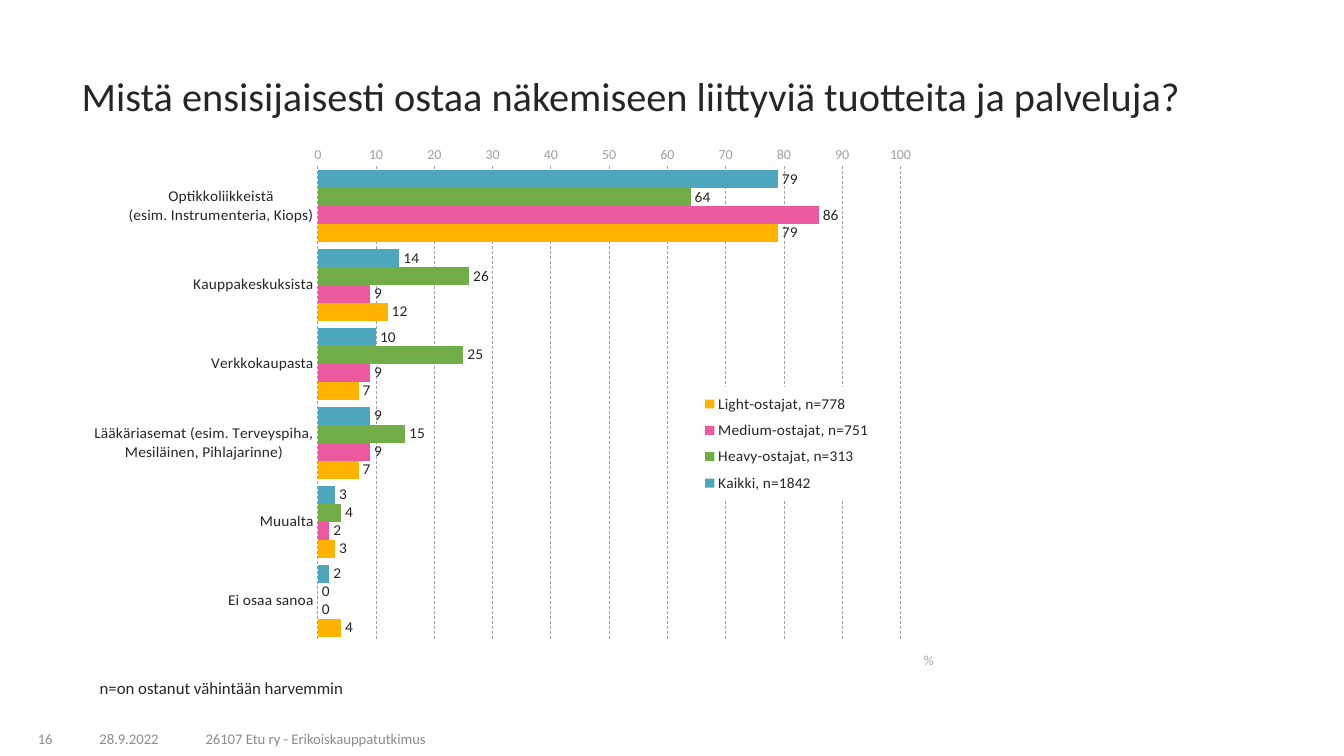
import pptx
import pptx.util
import pptx.chart.data
import pptx.dml.color
import pptx.enum.chart
import pptx.enum.dml
import pptx.enum.text
import pptx.oxml
import pptx.oxml.ns

EMU_PER_PX = 9144
FONT = "Calibri"
RGB = pptx.dml.color.RGBColor
INK = RGB(0x26, 0x26, 0x26)
FOOTER_GREY = RGB(0x8C, 0x8C, 0x8C)
AXIS_GREY = RGB(0xA0, 0xA0, 0xA0)
TEAL = RGB(0x4D, 0xA7, 0xBC)
GREEN = RGB(0x70, 0xAD, 0x47)
PINK = RGB(0xEB, 0x59, 0x9E)
AMBER = RGB(0xFF, 0xB2, 0x00)

ALIGN = pptx.enum.text.PP_ALIGN
ANCHOR = pptx.enum.text.MSO_ANCHOR
QN = pptx.oxml.ns.qn

PLACES = [
    "Optikkoliikkeistä\n(esim. Instrumenteria, Kiops)",
    "Kauppakeskuksista",
    "Verkkokaupasta",
    "Lääkäriasemat (esim. Terveyspiha,\nMesiläinen, Pihlajarinne)",
    "Muualta",
    "Ei osaa sanoa",
]
BUYERS = [
    ("Kaikki, n=1842", TEAL, (79, 14, 10, 9, 3, 2)),
    ("Heavy-ostajat, n=313", GREEN, (64, 26, 25, 15, 4, 0)),
    ("Medium-ostajat, n=751", PINK, (86, 9, 9, 9, 2, 0)),
    ("Light-ostajat, n=778", AMBER, (79, 12, 7, 7, 3, 4)),
]
FOOTERS = [
    ("16", (3, 716, 59, 30), ALIGN.RIGHT),
    ("28.9.2022", (66, 716, 124, 30), ALIGN.CENTER),
    ("26107 Etu ry - Erikoiskauppatutkimus", (194, 716, 592, 30), ALIGN.LEFT),
]


def px(length):
    return pptx.util.Emu(length * EMU_PER_PX)


def style_font(font, size, color):
    font.name = FONT
    font.size = pptx.util.Pt(size)
    font.bold = False
    font.color.rgb = color


def write_line(frame, words, size, color, align, anchor, spacing=1.0):
    frame.word_wrap = True
    frame.auto_size = pptx.enum.text.MSO_AUTO_SIZE.NONE
    frame.vertical_anchor = anchor
    frame.text = words
    line = frame.paragraphs[0]
    line.alignment = align
    line.line_spacing = spacing
    style_font(line.runs[0].font, size, color)


def add_title(slide, words, box):
    title = slide.shapes.title
    title.left, title.top, title.width, title.height = map(px, box)
    write_line(title.text_frame, words, 28.8, INK, ALIGN.LEFT, ANCHOR.MIDDLE, 0.9)


def add_label(slide, words, box, size, color, align, anchor, spacing=1.0):
    label = slide.shapes.add_textbox(*map(px, box))
    write_line(label.text_frame, words, size, color, align, anchor, spacing)


def set_layout(part, before, **fractions):
    old = part.find(QN("c:layout"))
    if old is not None:
        part.remove(old)
    target = '<c:layoutTarget val="inner"/>' if before is None else ""
    modes = "".join(f'<c:{axis}Mode val="edge"/>' for axis in "xy")
    values = "".join(f'<c:{key} val="{value}"/>' for key, value in fractions.items())
    layout = pptx.oxml.parse_xml(
        f'<c:layout {pptx.oxml.ns.nsdecls("c")}><c:manualLayout>'
        f"{target}{modes}{values}</c:manualLayout></c:layout>"
    )
    if before is None:
        part.insert(0, layout)
    else:
        part.find(QN(before)).addnext(layout)


def style_place_axis(axis):
    axis.reverse_order = True
    axis.crosses = pptx.enum.chart.XL_AXIS_CROSSES.MAXIMUM
    axis.major_tick_mark = pptx.enum.chart.XL_TICK_MARK.NONE
    axis.format.line.fill.background()
    style_font(axis.tick_labels.font, 11, INK)


def style_percent_axis(axis):
    axis.minimum_scale, axis.maximum_scale, axis.major_unit = 0, 100, 10
    axis.major_tick_mark = pptx.enum.chart.XL_TICK_MARK.NONE
    axis.format.line.fill.background()
    style_font(axis.tick_labels.font, 10, AXIS_GREY)
    grid = axis.major_gridlines.format.line
    grid.color.rgb = AXIS_GREY
    grid.width = pptx.util.Pt(0.5)
    grid.dash_style = pptx.enum.dml.MSO_LINE.DASH
    unit = axis.axis_title
    unit.text_frame.text = "%"
    style_font(unit.text_frame.paragraphs[0].runs[0].font, 10, AXIS_GREY)
    set_layout(unit._element, "c:tx", x=0.98, y=0.95)


def style_legend(chart):
    chart.has_legend = True
    legend = chart.legend
    legend.position = pptx.enum.chart.XL_LEGEND_POSITION.RIGHT
    legend.include_in_layout = False
    style_font(legend.font, 11, INK)
    set_layout(legend._element, "c:legendPos", x=0.72, y=0.44, w=0.21, h=0.22)
    white = pptx.oxml.parse_xml(
        f'<c:spPr {pptx.oxml.ns.nsdecls("c", "a")}><a:solidFill>'
        '<a:srgbClr val="FFFFFF"/></a:solidFill></c:spPr>'
    )
    legend._element.find(QN("c:txPr")).addprevious(white)


def style_bars(bars, color):
    bars.format.fill.solid()
    bars.format.fill.fore_color.rgb = color
    bars.invert_if_negative = False
    labels = bars.data_labels
    labels.show_value = True
    labels.number_format = "#,##0"
    labels.number_format_is_linked = False
    labels.position = pptx.enum.chart.XL_LABEL_POSITION.OUTSIDE_END
    style_font(labels.font, 11, INK)


def add_buyer_chart(slide, box):
    data = pptx.chart.data.CategoryChartData()
    data.categories = PLACES
    for name, _, shares in BUYERS:
        data.add_series(name, shares)
    chart = slide.shapes.add_chart(
        pptx.enum.chart.XL_CHART_TYPE.BAR_CLUSTERED, *map(px, box), data
    ).chart
    chart.has_title = False
    style_font(chart.font, 12, INK)
    plot = chart.plots[0]
    plot.gap_width = 40
    plot.overlap = 0
    plot.vary_by_categories = False
    for bars, (_, color, _) in zip(plot.series, BUYERS):
        style_bars(bars, color)
    style_place_axis(chart.category_axis)
    style_percent_axis(chart.value_axis)
    style_legend(chart)
    plot_area = chart._chartSpace.chart.plotArea
    set_layout(plot_area, None, x=0.284, y=0.012, w=0.672, h=0.92)


def main():
    deck = pptx.Presentation()
    deck.slide_width, deck.slide_height = px(1333), px(750)
    slide = deck.slides.add_slide(deck.slide_layouts[5])
    add_title(
        slide,
        "Mistä ensisijaisesti ostaa näkemiseen liittyviä tuotteita ja palveluja?",
        (71, 64, 1207, 68),
    )
    add_buyer_chart(slide, (71, 146, 860, 524))
    add_label(slide, "n=on ostanut vähintään harvemmin", (89, 670, 344, 28),
              12, INK, ALIGN.LEFT, ANCHOR.TOP, 0.9)
    for words, box, align in FOOTERS:
        add_label(slide, words, box, 10.5, FOOTER_GREY, align, ANCHOR.BOTTOM)
    deck.save("out.pptx")


if __name__ == "__main__":
    main()
